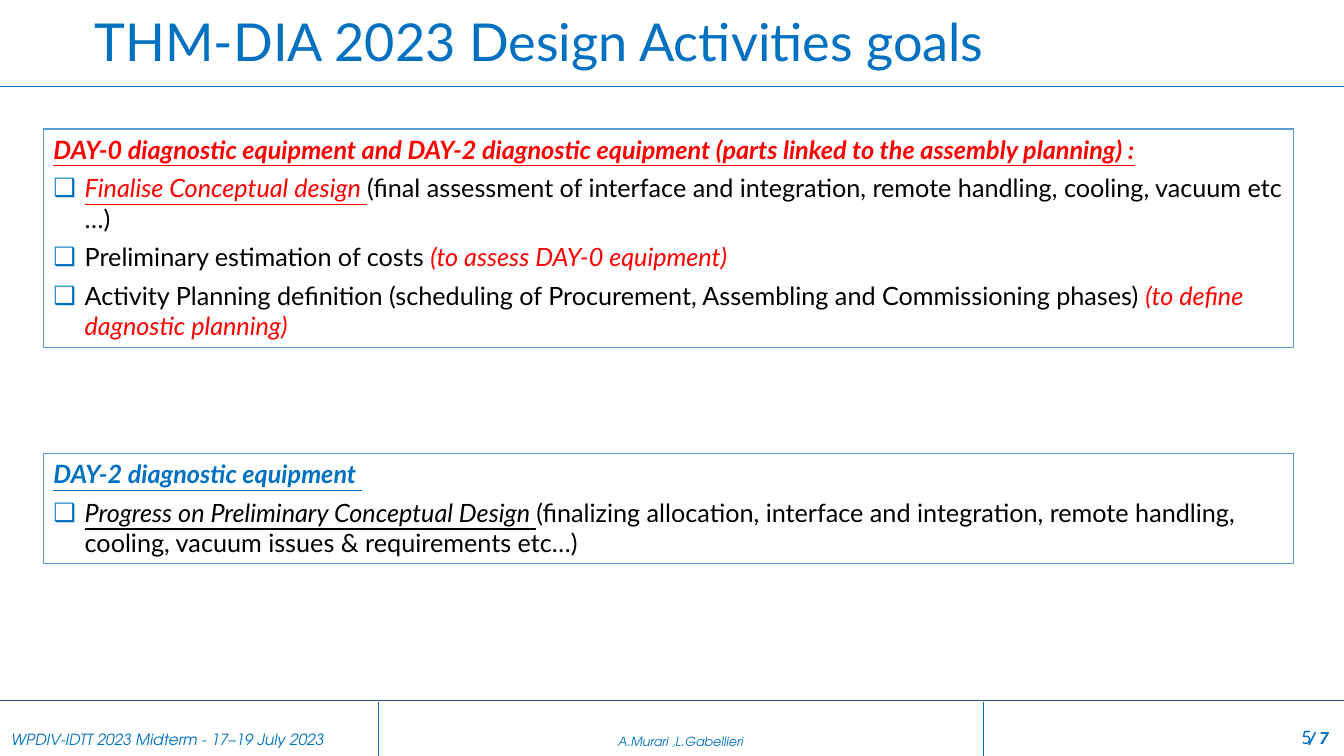
from lxml import etree
from pptx import Presentation
from pptx import util as u
from pptx.dml.color import RGBColor
from pptx.enum import shapes, text
from pptx.oxml import ns

WIDTH, HEIGHT = 13.33, 7.5
BLUE, NAVY, RED, BLACK = "0070C0", "2F5597", "FF0000", "000000"
BOX_LEFT, BOX_WIDTH = 0.43, 12.4
PLAIN_TABLE = "{2D5ABB26-0587-4C30-8999-92F81FD0307C}"

# Character formats
ADVENTOR = {"name": "TeX Gyre Adventor", "italic": True, "color": BLUE}
LATO = {"name": "Lato", "size": 18, "bold": False, "color": BLACK}
NOTE = LATO | {"italic": True, "color": RED}
LEAD = LATO | {"italic": True, "underline": True}
HEADING = LEAD | {"bold": True}

# Content: each paragraph is a list of (text, format) runs; the first is the heading
DAY_0_GOALS = [
    [("DAY-0 diagnostic equipment and DAY-2 diagnostic equipment "
      "(parts linked to the assembly planning) :", HEADING | {"color": RED})],
    [("Finalise Conceptual design ", LEAD | {"color": RED}),
     ("(final assessment of interface and integration, remote handling, "
      "cooling, vacuum etc …)", LATO)],
    [("Preliminary estimation of costs ", LATO),
     ("(to assess DAY-0 equipment)", NOTE)],
    [("Activity Planning definition (scheduling of Procurement, Assembling "
      "and Commissioning phases) ", LATO),
     ("(to define dagnostic planning)", NOTE)],
]
DAY_2_GOALS = [
    [("DAY-2 diagnostic equipment ", HEADING | {"color": BLUE})],
    [("Progress on Preliminary Conceptual Design ", LEAD),
     ("(finalizing allocation, interface and integration, remote handling, "
      "cooling, vacuum issues & requirements etc…)", LATO)],
]
# Footer: width, text, alignment, format
FOOTER = [
    (3.77, "WPDIV-IDTT 2023 Midterm - 17–19 July 2023", text.PP_ALIGN.LEFT,
     ADVENTOR | {"size": 11}),
    (6, "A.Murari ,L.Gabellieri", text.PP_ALIGN.CENTER, ADVENTOR | {"size": 9}),
    (3.56, "/ 7", text.PP_ALIGN.RIGHT,
     ADVENTOR | {"name": "Roboto", "size": 12, "bold": True}),
]


def color(hex_value):
    return RGBColor.from_string(hex_value)


def add_element(parent, tag, **attributes):
    return etree.SubElement(parent, ns.qn(tag), attributes)


def place(shape, left, top, width, height):
    for name, value in zip(("left", "top", "width", "height"),
                           (left, top, width, height)):
        setattr(shape, name, u.Inches(value))


def add_run(paragraph, content, style):
    run = paragraph.add_run()
    run.text = content
    for name, value in style.items():
        if name == "color":
            run.font.color.rgb = color(value)
        else:
            setattr(run.font, name, u.Pt(value) if name == "size" else value)


def set_bullet(paragraph, character=None):
    properties = paragraph._p.get_or_add_pPr()
    indent = u.Inches(0.31) if character else 0
    properties.set("marL", str(indent))
    properties.set("indent", str(-indent))
    if character:
        add_element(add_element(properties, "a:buClr"), "a:srgbClr", val=BLUE)
        add_element(properties, "a:buChar", char=character)
    else:
        add_element(properties, "a:buNone")


def add_rule(slide, top, line_color):
    rule = slide.shapes.add_connector(shapes.MSO_CONNECTOR.STRAIGHT, 0, u.Inches(top),
                                      u.Inches(WIDTH), u.Inches(top))
    rule.line.color.rgb = color(line_color)
    rule.line.width = u.Pt(0.5)
    add_element(rule._element.spPr, "a:effectLst")


def fill_title(title, content):
    place(title, 0.84, 0.11, 10.59, 0.66)
    frame = title.text_frame
    frame.auto_size = text.MSO_AUTO_SIZE.NONE
    frame.vertical_anchor = text.MSO_ANCHOR.MIDDLE
    paragraph = frame.paragraphs[0]
    paragraph.alignment = text.PP_ALIGN.LEFT
    paragraph.line_spacing = 0.9
    add_run(paragraph, content, {"name": "Lato", "size": 37.3, "color": BLUE})


def fill_goals(body, top, height, goals):
    place(body, BOX_LEFT, top, BOX_WIDTH, height)
    body.fill.solid()
    body.fill.fore_color.rgb = color("FFFFFF")
    body.line.color.rgb = color("5B9BD5")
    body.line.width = u.Pt(1)
    frame = body.text_frame
    frame.auto_size = text.MSO_AUTO_SIZE.NONE
    frame.vertical_anchor = text.MSO_ANCHOR.TOP
    for index, runs in enumerate(goals):
        paragraph = frame.add_paragraph() if index else frame.paragraphs[0]
        set_bullet(paragraph, "❑" if index else None)
        paragraph.space_before = u.Pt(6 if index else 0)
        for content, style in runs:
            add_run(paragraph, content, style)


def add_cell_border(cell, side):
    border = add_element(cell._tc.get_or_add_tcPr(), side, w=str(u.Pt(0.25)))
    add_element(add_element(border, "a:solidFill"), "a:srgbClr", val=BLUE)


def add_footer(slide, top):
    frame = slide.shapes.add_table(1, len(FOOTER), u.Inches(-0.02), u.Inches(top),
                                   u.Inches(WIDTH), u.Inches(HEIGHT - top))
    table = frame.table
    table.first_row = table.horz_banding = False
    table._tbl.tblPr.find(ns.qn("a:tableStyleId")).text = PLAIN_TABLE
    for index, (width, content, alignment, style) in enumerate(FOOTER):
        table.columns[index].width = u.Inches(width)
        cell = table.cell(0, index)
        if index > 0:
            add_cell_border(cell, "a:lnL")
        if index < len(FOOTER) - 1:
            add_cell_border(cell, "a:lnR")
        cell.fill.background()
        cell.vertical_anchor = text.MSO_ANCHOR.BOTTOM
        cell.margin_left = cell.margin_right = u.Inches(0.13)
        cell.margin_top = cell.margin_bottom = u.Inches(0.07)
        paragraph = cell.text_frame.paragraphs[0]
        paragraph.alignment = alignment
        add_run(paragraph, content, style)


def add_page_number(slide, number):
    box = slide.shapes.add_textbox(0, 0, 0, 0)
    place(box, 10.11, 7.13, 3, 0.4)
    box.text_frame.word_wrap = True
    paragraph = box.text_frame.paragraphs[0]
    paragraph.alignment = text.PP_ALIGN.RIGHT
    add_run(paragraph, number, {"name": "Calibri", "size": 14.7, "color": BLUE})


def main():
    presentation = Presentation()
    presentation.slide_width = u.Inches(WIDTH)
    presentation.slide_height = u.Inches(HEIGHT)
    two_content = presentation.slide_layouts.get_by_name("Two Content")
    slide = presentation.slides.add_slide(two_content)
    title, upper, lower = slide.placeholders

    # Header
    fill_title(title, "THM-DIA 2023 Design Activities goals")
    add_rule(slide, 0.86, BLUE)

    # Goals
    fill_goals(upper, 1.28, 2.17, DAY_0_GOALS)
    fill_goals(lower, 4.5, 1.09, DAY_2_GOALS)

    # Footer
    add_rule(slide, 6.95, NAVY)
    add_footer(slide, 6.96)
    add_page_number(slide, "5")

    presentation.save("out.pptx")


if __name__ == "__main__":
    main()
